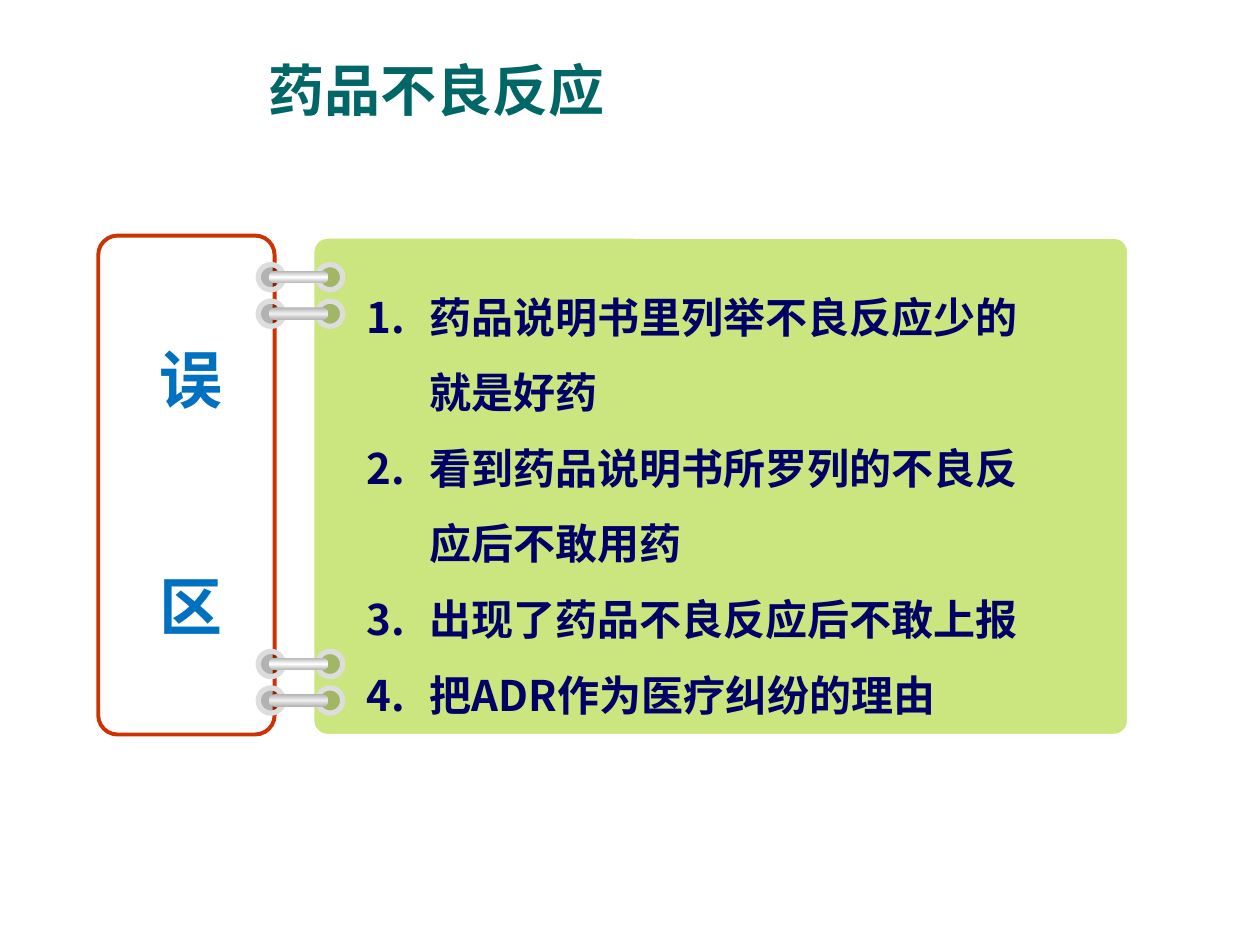
from lxml import etree
from pptx import Presentation
from pptx.dml.color import RGBColor
from pptx.enum.shapes import MSO_SHAPE
from pptx.enum.text import MSO_ANCHOR, MSO_AUTO_SIZE, PP_ALIGN
from pptx.oxml.ns import qn
from pptx.util import Inches, Pt

ROUNDED, OVAL = MSO_SHAPE.ROUNDED_RECTANGLE, MSO_SHAPE.OVAL

TITLE = "药品不良反应"
TAB_WORDS = ["误", "区"]
MYTHS = [
    "药品说明书里列举不良反应少的就是好药",
    "看到药品说明书所罗列的不良反应后不敢用药",
    "出现了药品不良反应后不敢上报",
    "把ADR作为医疗纠纷的理由",
]
TITLE_FONT = {"name": "Arial", "size": Pt(32), "bold": True}
TAB_FONT = {"name": "Cabin", "size": Pt(36), "bold": True}
MYTH_FONT = {"name": "Noto Sans CJK SC", "size": Pt(24), "bold": True}

# Binder rings: two pairs, each with a bright upper and a duller lower bar
PAIR_TOPS = [2.2, 5.27]
RING_GAP = 0.29
BAR_CENTERS = ["FFFFFF", "EDEDED"]
RING_X, BAR_X = [(2.62, 20), (2.15, 30)], 2.37  # ring centre, opacity


def rgb(hex_color):
    return RGBColor.from_string(hex_color)


def place(shape, left, top, width, height):
    shape.left, shape.top = Inches(left), Inches(top)
    shape.width, shape.height = Inches(width), Inches(height)


def add_filled(kind, box, color, opacity, line, line_width, corner=None):
    """Add a shape with a translucent fill and a solid outline."""
    shape = slide.shapes.add_shape(kind, *map(Inches, box))
    shape.shadow.inherit = False
    shape.fill.solid()
    shape.fill.fore_color.rgb = rgb(color)
    srgb = shape.fill._xPr.find(qn("a:solidFill")).find(qn("a:srgbClr"))
    etree.SubElement(srgb, qn("a:alpha")).set("val", str(opacity * 1000))
    shape.line.color.rgb = rgb(line)
    shape.line.width = Pt(line_width)
    if corner is not None:
        shape.adjustments[0] = corner


def add_bar(center_x, center_y, middle, width=0.47, height=0.1):
    """Add a metallic bar, grey at the edges and light along its middle."""
    bar = slide.shapes.add_shape(
        ROUNDED, Inches(center_x - width / 2), Inches(center_y - height / 2),
        Inches(width), Inches(height))
    bar.shadow.inherit = False
    bar.adjustments[0] = 0.5
    bar.line.fill.background()
    bar.fill.gradient()
    bar.fill.gradient_angle = 90
    stops = bar.fill._xPr.find(qn("a:gradFill")).find(qn("a:gsLst"))
    for stop in list(stops):
        stops.remove(stop)
    for position, color in [(0, "B2B2B2"), (50, middle), (100, "B2B2B2")]:
        stop = etree.SubElement(stops, qn("a:gs"), pos=str(position * 1000))
        etree.SubElement(stop, qn("a:srgbClr"), val=color)


def write(shape, lines, font, color, align, spacing=1.0, gap=0, numbered=False):
    frame = shape.text_frame
    frame.word_wrap = True
    frame.auto_size = MSO_AUTO_SIZE.NONE
    frame.vertical_anchor = MSO_ANCHOR.TOP
    for i, line in enumerate(lines):
        paragraph = frame.paragraphs[0] if i == 0 else frame.add_paragraph()
        paragraph.alignment = align
        paragraph.line_spacing = spacing
        paragraph.space_before = Pt(gap if i else 0)
        if numbered:
            properties = paragraph._p.get_or_add_pPr()
            properties.set("marL", str(Inches(0.5)))
            properties.set("indent", str(Inches(-0.5)))
            etree.SubElement(properties, qn("a:buFont"), typeface="+mj-lt")
            etree.SubElement(properties, qn("a:buAutoNum"), type="arabicPeriod")
        run = paragraph.add_run()
        run.text = line
        for attribute, value in font.items():
            setattr(run.font, attribute, value)
        run.font.color.rgb = rgb(color)


prs = Presentation()
prs.slide_width, prs.slide_height = Inches(10), Inches(7.5)
slide = prs.slides.add_slide(prs.slide_layouts[1])
title, myths = slide.shapes.title, slide.placeholders[1]

add_filled(ROUNDED, (0.78, 1.87, 1.4, 3.96), "FFFFFF", 70, "CC3300", 2.25, 0.11)
add_filled(ROUNDED, (2.48, 1.88, 6.48, 3.96), "99CC00", 50, "FEFEFE", 2.25, 0.03)

for pair_top in PAIR_TOPS:
    for row, middle in enumerate(BAR_CENTERS):
        center_y = pair_top + row * RING_GAP
        for center_x, opacity in RING_X:
            add_filled(OVAL, (center_x - 0.1, center_y - 0.1, 0.2, 0.2),
                       "000000", opacity, "DDDDDD", 3)
        add_bar(BAR_X, center_y, middle)

tab = slide.shapes.add_textbox(*map(Inches, (1.17, 2.65, 0.57, 2.27)))
write(tab, TAB_WORDS, TAB_FONT, "0070C0", PP_ALIGN.CENTER, gap=87)

place(myths, 2.81, 2.06, 5.55, 4.5)
write(myths, MYTHS, MYTH_FONT, "000066", PP_ALIGN.LEFT, spacing=1.5, numbered=True)
slide.shapes._spTree.append(myths._element)  # in front of the green panel

place(title, 2.03, 0.39, 5.34, 0.63)
write(title, [TITLE], TITLE_FONT, "006666", PP_ALIGN.LEFT)

prs.save("out.pptx")
